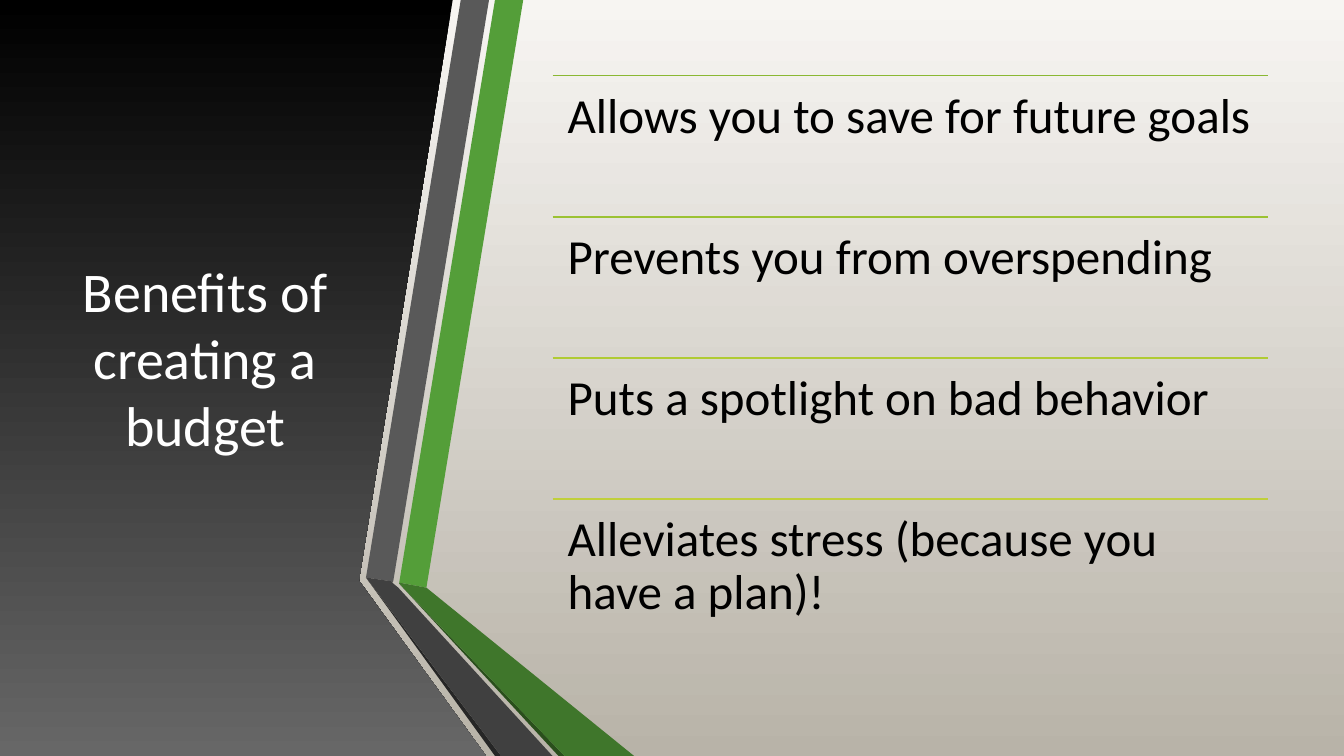
from pptx import Presentation
from pptx.dml.color import RGBColor
from pptx.enum.shapes import MSO_CONNECTOR
from pptx.enum.text import MSO_ANCHOR, PP_ALIGN
from pptx.oxml.ns import qn
from pptx.util import Pt
from lxml import etree

PX = 9144
STRAIGHT = MSO_CONNECTOR.STRAIGHT
TOP, MIDDLE = MSO_ANCHOR.TOP, MSO_ANCHOR.MIDDLE
LEFT, CENTER = PP_ALIGN.LEFT, PP_ALIGN.CENTER


def paint(fill, *colors):
    if len(colors) == 1:
        fill.solid()
        fill.fore_color.rgb = RGBColor.from_string(colors[0])
        return
    fill.gradient()
    fill.gradient_angle = 270
    for stop, color in zip(fill.gradient_stops, colors):
        stop.color.rgb = RGBColor.from_string(color)


def add_text(text, left, top, width, height, *, size, color, inset,
             align=LEFT, anchor=TOP, spacing=1.0):
    box = slide.shapes.add_textbox(left * PX, top * PX, width * PX, height * PX)
    frame = box.text_frame
    frame.word_wrap = True
    frame.vertical_anchor = anchor
    frame.margin_left = frame.margin_right = inset * PX
    frame.margin_top = frame.margin_bottom = inset * PX
    paragraph = frame.paragraphs[0]
    paragraph.alignment = align
    paragraph.line_spacing = spacing
    run = paragraph.add_run()
    run.text = text
    run.font.name = "Calibri"
    run.font.size = Pt(size)
    paint(run.font.fill, color)


presentation = Presentation()
presentation.slide_width = 1333 * PX
presentation.slide_height = 750 * PX
slide = presentation.slides.add_slide(presentation.slide_layouts[6])
paint(slide.background.fill, "F7F5F2", "B8B3A8")

title_panel = [(0, 0), (449, 0), (356, 576), (482, 750), (0, 750)]
green_band = [(396, 578), (423, 583), (519, 0), (491, 0)]
gray_band = [(485, 0), (457, 0), (363, 573), (390, 577)]
gray_edge = [(363, 573), (491, 750), (497, 750)]
green_edge = [(396, 579), (554, 750), (560, 750)]
green_fold = [(396, 578), (396, 579), (560, 750), (629, 750), (423, 583)]
gray_fold = [(548, 750), (395, 583), (389, 578), (390, 577), (363, 573), (497, 750)]

for points, colors in [
    (title_panel, ["000000", "676767"]),
    (green_band, ["549E39"]),
    (gray_band, ["595959"]),
    (gray_edge, ["262626"]),
    (green_edge, ["2A4F1C"]),
    (green_fold, ["3F762B"]),
    (gray_fold, ["404040"]),
]:
    builder = slide.shapes.build_freeform(*points[0], scale=PX)
    builder.add_line_segments(points[1:], close=True)
    shape = builder.convert_to_shape()
    shape.shadow.inherit = False
    shape.line.fill.background()
    paint(shape.fill, *colors)

add_text("Benefits of creating a budget", 59, 75, 289, 558, size=40,
         color="FFFFFF", inset=10, align=CENTER, anchor=MIDDLE)

benefits = [
    ("Allows you to save for future goals", "8AB833"),
    ("Prevents you from overspending", "9CC233"),
    ("Puts a spotlight on bad behavior", "B0CB34"),
    ("Alleviates stress (because you have a plan)!", "C0CF3A"),
]
list_left, list_top, list_width, row_height = 548, 75, 710, 140

for index, (benefit, rule_color) in enumerate(benefits):
    top = list_top + index * row_height
    rule = slide.shapes.add_connector(
        STRAIGHT, list_left * PX, top * PX, (list_left + list_width) * PX, top * PX)
    rule.line.width = Pt(1.25)
    paint(rule.line.fill, rule_color)
    etree.SubElement(rule._element.spPr, qn("a:effectLst"))
    add_text(benefit, list_left, top, list_width, row_height, size=35,
             color="000000", inset=15, spacing=0.9)

presentation.save("out.pptx")
